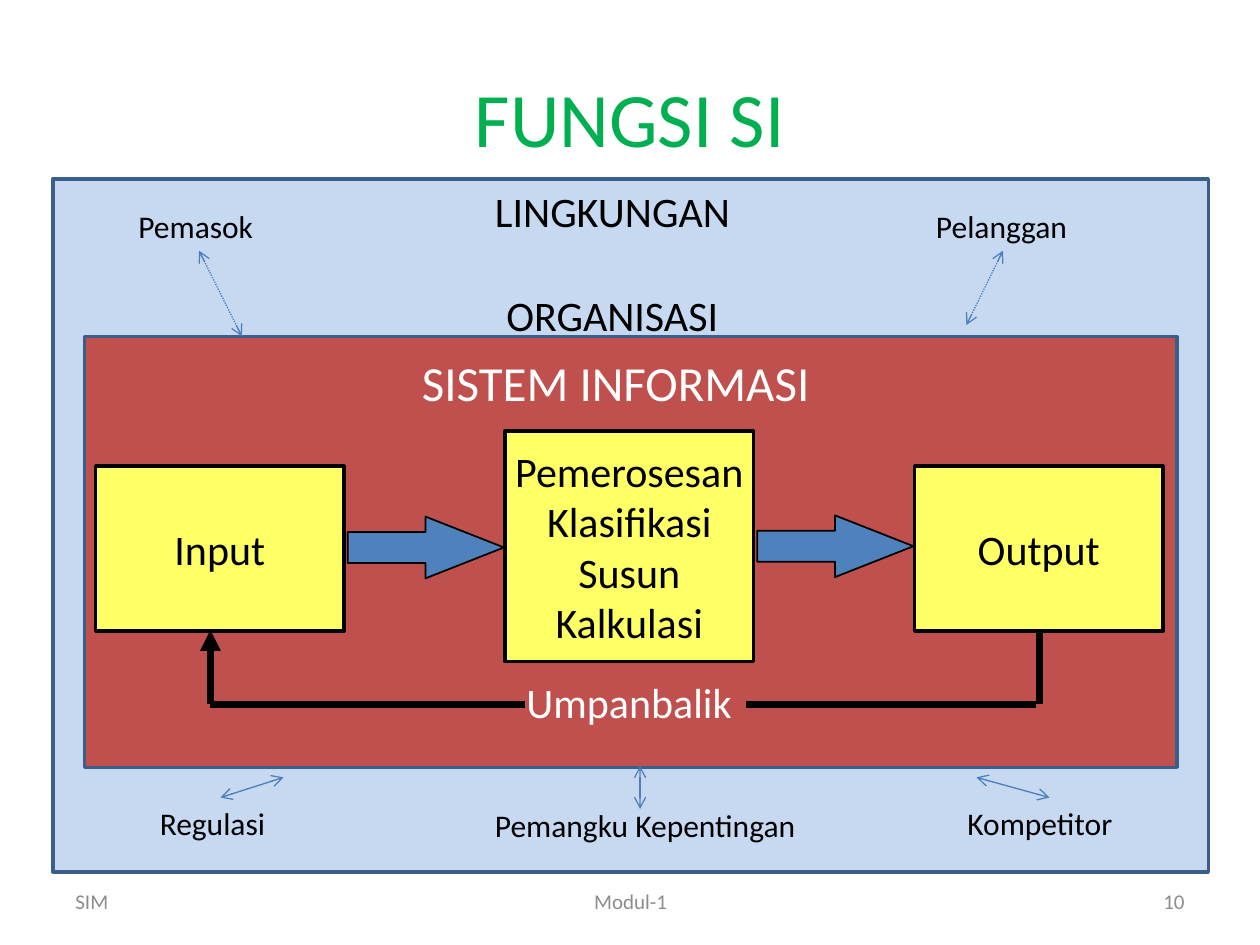
import pptx
import pptx.util
import pptx.dml.color
import pptx.enum.dml
import pptx.enum.shapes
import pptx.enum.text
import pptx.oxml.ns
import lxml.etree
from dataclasses import dataclass

Align = pptx.enum.text.PP_ALIGN
Anchor = pptx.enum.text.MSO_ANCHOR
Preset = pptx.enum.shapes.MSO_SHAPE
Dash = pptx.enum.dml.MSO_LINE

PX = pptx.util.Inches(1) // 100


@dataclass(frozen=True)
class Theme:
    font: str = "Calibri"
    title: str = "00B050"
    footer: str = "8C8C8C"
    environment: str = "C6D9F1"
    system: str = "C0504D"
    frame: str = "3A5F8C"
    box: str = "FFFF66"
    flow: str = "4F81BD"
    link: str = "4B7EBC"
    dark: str = "000000"
    light: str = "FFFFFF"
    title_size: int = 44
    system_size: int = 28
    heading_size: int = 24
    actor_size: int = 18
    footer_size: int = 12


THEME = Theme()

TITLE = ("FUNGSI SI", (50, 30, 900, 125))
FOOTERS = [
    ("SIM", (50, 695, 233, 40), Align.LEFT),
    ("Modul-1", (342, 695, 317, 40), Align.CENTER),
    ("10", (717, 695, 233, 40), Align.RIGHT),
]
FRAMES = [
    ((42, 142, 917, 550), THEME.environment),
    ((67, 267, 867, 342), THEME.system),
]
STAGE_LEFT, STAGE_STEP, STAGE_WIDTH, STAGE_BOTTOM_ROW = 76, 325, 197, 370
STAGES = [
    (["Input"], 370, 131),
    (["Pemerosesan", "Klasifikasi", "Susun", "Kalkulasi"], 342, 183),
    (["Output"], 370, 131),
]
FLOW_TOP, FLOW_WIDTH, FLOW_HEIGHT = 410, 124, 49
HEADINGS = [
    ("Umpanbalik", (408, 532, 184, 50), THEME.heading_size, THEME.light),
    ("SISTEM INFORMASI", (325, 275, 331, 57), THEME.system_size, THEME.light),
    ("LINGKUNGAN", (383, 142, 209, 50), THEME.heading_size, THEME.dark),
    ("ORGANISASI", (392, 225, 192, 50), THEME.heading_size, THEME.dark),
]
ACTORS = [
    ("Pemasok", (100, 159, 117, 40)),
    ("Pelanggan", (733, 159, 125, 40)),
    ("Regulasi", (117, 633, 117, 40)),
    ("Pemangku Kepentingan", (383, 635, 267, 40)),
    ("Kompetitor", (758, 633, 150, 40)),
]
FEEDBACK = [
    ((592, 559, 822, 559), {}),
    ((825, 559, 825, 500), {}),
    ((167, 500, 167, 559), {"headEnd": "triangle"}),
    ((167, 559, 417, 559), {}),
]
LINKS = [
    ((158, 199, 192, 267), Dash.ROUND_DOT),
    ((796, 199, 767, 258), Dash.ROUND_DOT),
    ((775, 617, 833, 633), None),
    ((508, 642, 508, 608), None),
    ((175, 633, 225, 617), None),
]
BOTH_ENDS = {"headEnd": "arrow", "tailEnd": "arrow"}


def scaled(lengths):
    return [length * PX for length in lengths]


def rgb(value):
    return pptx.dml.color.RGBColor.from_string(value)


def write(shape, lines, size, color, align=Align.LEFT, anchor=Anchor.TOP, wrap=True):
    frame = shape.text_frame
    frame.word_wrap = wrap
    frame.vertical_anchor = anchor
    frame.text = "\n".join(lines)
    for paragraph in frame.paragraphs:
        paragraph.alignment = align
        paragraph.font.name = THEME.font
        paragraph.font.size = pptx.util.Pt(size)
        paragraph.font.color.rgb = rgb(color)


def add_text(slide, text, box, *style, **options):
    write(slide.shapes.add_textbox(*scaled(box)), [text], *style, **options)


def add_block(slide, preset, box, fill, line, width):
    shape = slide.shapes.add_shape(preset, *scaled(box))
    shape.shadow.inherit = False
    shape.fill.solid()
    shape.fill.fore_color.rgb = rgb(fill)
    shape.line.color.rgb = rgb(line)
    shape.line.width = pptx.util.Pt(width)
    return shape


def add_line(slide, ends, color, width, arrowheads, dash=None):
    connector = slide.shapes.add_connector(
        pptx.enum.shapes.MSO_CONNECTOR.STRAIGHT, *scaled(ends))
    connector.line.color.rgb = rgb(color)
    connector.line.width = pptx.util.Pt(width)
    if dash is not None:
        connector.line.dash_style = dash
    outline = connector.line._get_or_add_ln()
    for end, kind in arrowheads.items():
        lxml.etree.SubElement(outline, pptx.oxml.ns.qn("a:" + end), type=kind)
    lxml.etree.SubElement(connector._element.spPr, pptx.oxml.ns.qn("a:effectLst"))


def main():
    presentation = pptx.Presentation()
    presentation.slide_width, presentation.slide_height = scaled((1000, 750))
    slide = presentation.slides.add_slide(presentation.slide_layouts[5])

    text, box = TITLE
    title = slide.shapes.title
    title.left, title.top, title.width, title.height = scaled(box)
    write(title, [text], THEME.title_size, THEME.title, Align.CENTER, Anchor.MIDDLE)

    for text, box, align in FOOTERS:
        add_text(slide, text, box, THEME.footer_size, THEME.footer, align, Anchor.MIDDLE)

    for box, fill in FRAMES:
        add_block(slide, Preset.RECTANGLE, box, fill, THEME.frame, 2)

    for index, (lines, top, height) in enumerate(STAGES):
        left = STAGE_LEFT + index * STAGE_STEP
        stage = add_block(slide, Preset.RECTANGLE, (left, top, STAGE_WIDTH, height),
                          THEME.box, THEME.dark, 2)
        write(stage, lines, THEME.heading_size, THEME.dark,
              Align.CENTER, Anchor.MIDDLE, wrap=False)

    for index in range(len(STAGES) - 1):
        left = STAGE_LEFT + STAGE_WIDTH + 3 + index * STAGE_STEP
        arrow = add_block(slide, Preset.RIGHT_ARROW,
                          (left, FLOW_TOP - index, FLOW_WIDTH, FLOW_HEIGHT),
                          THEME.flow, THEME.dark, 1)
        arrow.adjustments[0] = 0.5
        arrow.adjustments[1] = 1.27

    for ends, arrowheads in FEEDBACK:
        add_line(slide, ends, THEME.dark, 4, arrowheads)

    for text, box, size, color in HEADINGS:
        add_text(slide, text, box, size, color, wrap=False)

    for text, box in ACTORS:
        add_text(slide, text, box, THEME.actor_size, THEME.dark)

    for ends, dash in LINKS:
        add_line(slide, ends, THEME.link, 0.75, BOTH_ENDS, dash)

    presentation.save("out.pptx")


if __name__ == "__main__":
    main()
